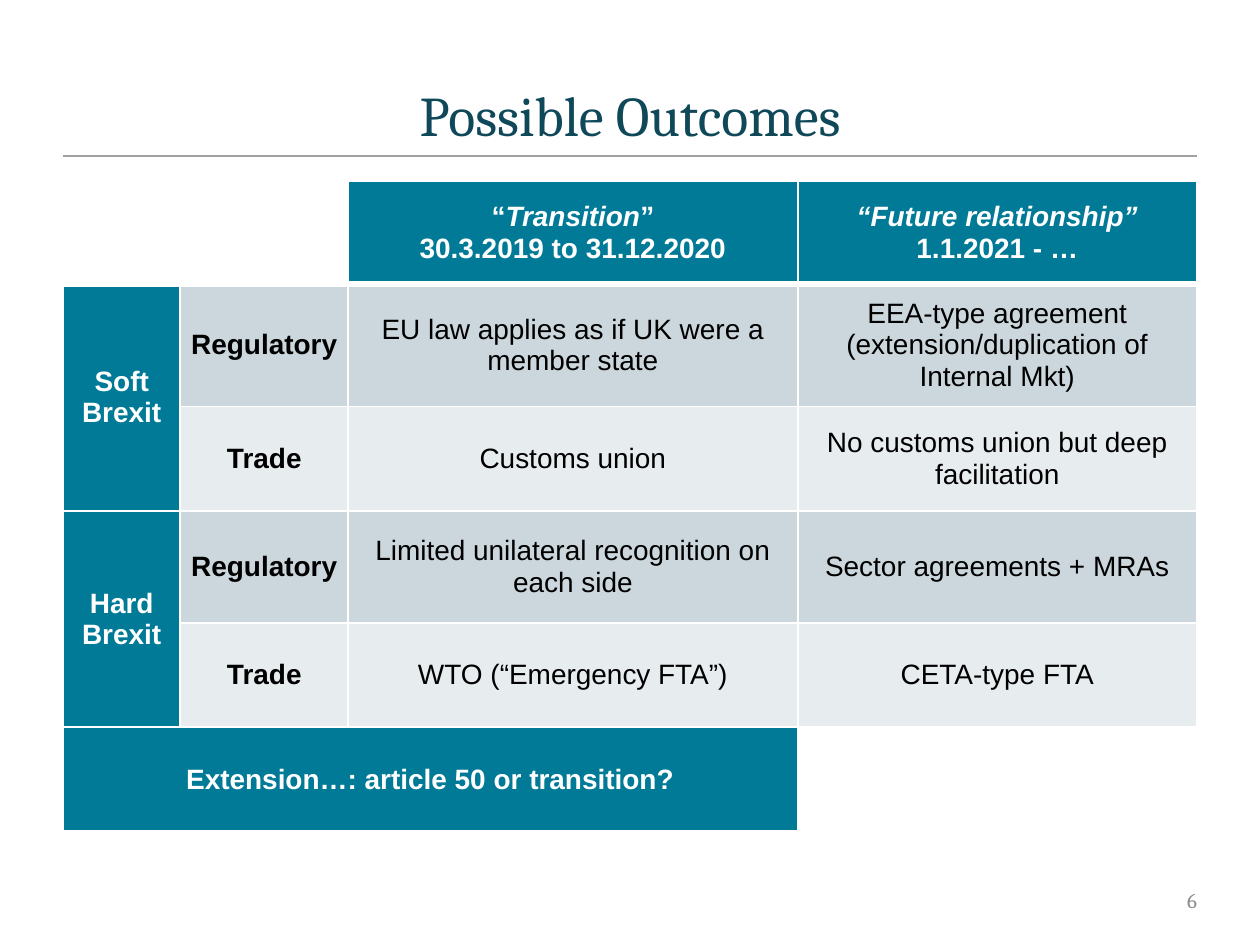
"""Build the slide on possible Brexit outcomes."""
import lxml.etree
import pptx
import pptx.dml.color
import pptx.enum.shapes
import pptx.enum.text
import pptx.oxml.ns
import pptx.util

Inches, Pt = pptx.util.Inches, pptx.util.Pt
RGBColor = pptx.dml.color.RGBColor
ALIGN = pptx.enum.text.PP_ALIGN
MIDDLE = pptx.enum.text.MSO_ANCHOR.MIDDLE
qn = pptx.oxml.ns.qn

WIDTH = Inches(7.5)
HEIGHT = WIDTH * 3 // 4
MARGIN, CONTENT = int(WIDTH * 0.05), int(WIDTH * 0.9)
RULE_TOP = Inches(0.93)

TEAL = RGBColor(0x00, 0x7A, 0x96)
NAVY = RGBColor(0x0F, 0x48, 0x59)
BAND_DARK = RGBColor(0xCC, 0xD7, 0xDD)
BAND_LIGHT = RGBColor(0xE7, 0xEC, 0xEF)
WHITE = RGBColor(0xFF, 0xFF, 0xFF)
BLACK = RGBColor(0x00, 0x00, 0x00)
RULE_GREY = RGBColor(0xA0, 0xA0, 0xA0)
NUMBER_GREY = RGBColor(0x8C, 0x8C, 0x8C)

COLUMNS = (0.7, 1, 2.68, 2.38)
ROWS = (0.61, 0.73, 0.62, 0.67, 0.62, 0.62)
PERIODS = (
    ([("“", False), ("Transition", True), ("”", False)],
     [("30.3.2019 to 31.12.2020", False)]),
    ([("“Future relationship”", True)], [("1.1.2021 - …", False)]),
)
SCENARIOS = ("Soft Brexit", "Hard Brexit")
OUTCOMES = (
    ("Regulatory", "EU law applies as if UK were a member state",
     "EEA-type agreement (extension/duplication of Internal Mkt)"),
    ("Trade", "Customs union", "No customs union but deep facilitation"),
    ("Regulatory", "Limited unilateral recognition on each side",
     "Sector agreements + MRAs"),
    ("Trade", "WTO (“Emergency FTA”)", "CETA-type FTA"),
)


def add_run(paragraph, text, font, size, color, bold=False, italic=False):
    """Append one formatted run to a paragraph."""
    run = paragraph.add_run()
    run.text = text
    run.font.name, run.font.size = font, Pt(size)
    run.font.bold, run.font.italic = bold, italic
    run.font.color.rgb = color


def set_frame(frame, align):
    """Wrap and centre a text frame vertically and align its first paragraph."""
    frame.word_wrap = True
    frame.auto_size = pptx.enum.text.MSO_AUTO_SIZE.NONE
    frame.vertical_anchor = MIDDLE
    frame.margin_left = frame.margin_right = 0
    frame.margin_top = frame.margin_bottom = 0
    frame.paragraphs[0].alignment = align
    return frame.paragraphs[0]


def add_title(slide):
    """Place and format the title placeholder."""
    title = slide.shapes.title
    title.left, title.top = MARGIN, Inches(0.43)
    title.width, title.height = CONTENT, Inches(0.5)
    add_run(set_frame(title.text_frame, ALIGN.CENTER),
            "Possible Outcomes", "Cambria", 24, NAVY)


def add_rule(slide):
    """Draw the line under the title."""
    rule = slide.shapes.add_connector(pptx.enum.shapes.MSO_CONNECTOR.STRAIGHT,
                                      MARGIN, RULE_TOP, MARGIN + CONTENT, RULE_TOP)
    rule.line.color.rgb, rule.line.width = RULE_GREY, Pt(1)
    lxml.etree.SubElement(rule._element.spPr, qn("a:effectLst"))


def add_page_number(slide):
    """Write the page number at the lower right."""
    width = CONTENT // 4
    number = slide.shapes.add_textbox(MARGIN + CONTENT - width, Inches(5.21),
                                      width, Inches(0.3))
    add_run(set_frame(number.text_frame, ALIGN.RIGHT), "6", "Cambria", 9, NUMBER_GREY)


def set_borders(cell, bottom):
    """Give a cell white borders, with its own width at the bottom."""
    properties = cell._tc.get_or_add_tcPr()
    widths = {"L": 1, "R": 1, "T": 1, "B": bottom}
    for position, (side, width) in enumerate(widths.items()):
        border = lxml.etree.Element(qn(f"a:ln{side}"), w=str(Pt(width)))
        fill = lxml.etree.SubElement(border, qn("a:solidFill"))
        lxml.etree.SubElement(fill, qn("a:srgbClr"), val=str(WHITE))
        properties.insert(position, border)


def fill_cell(cell, paragraphs, fill, color=WHITE, bold=True):
    """Colour a cell and write its paragraphs of (text, italic) runs."""
    cell.fill.solid()
    cell.fill.fore_color.rgb = fill
    cell.vertical_anchor = MIDDLE
    cell.margin_left = cell.margin_right = Inches(0.05)
    cell.margin_top = cell.margin_bottom = 0
    for index, runs in enumerate(paragraphs):
        frame = cell.text_frame
        paragraph = frame.add_paragraph() if index else frame.paragraphs[0]
        paragraph.alignment = ALIGN.CENTER
        for text, italic in runs:
            add_run(paragraph, text, "Arial", 12, color, bold, italic)


def add_outcomes(slide):
    """Build the table of scenarios, areas and periods."""
    table = slide.shapes.add_table(len(ROWS), len(COLUMNS), MARGIN, Inches(1.08),
                                   CONTENT, Inches(sum(ROWS))).table
    for column, share in zip(table.columns, COLUMNS):
        column.width = int(CONTENT * share / sum(COLUMNS))
    for row, height in zip(table.rows, ROWS):
        row.height = Inches(height)
    for row in range(len(ROWS)):
        for column in range(len(COLUMNS)):
            cell = table.cell(row, column)
            cell.fill.background()
            set_borders(cell, 1 if row else 3)

    table.cell(0, 0).merge(table.cell(0, 1))
    for column, period in enumerate(PERIODS, 2):
        fill_cell(table.cell(0, column), period, TEAL)
    for index, scenario in enumerate(SCENARIOS):
        top = 1 + 2 * index
        table.cell(top, 0).merge(table.cell(top + 1, 0))
        fill_cell(table.cell(top, 0), [[(scenario, False)]], TEAL)
    for row, outcome in enumerate(OUTCOMES, 1):
        band = BAND_DARK if row % 2 else BAND_LIGHT
        for column, text in enumerate(outcome, 1):
            fill_cell(table.cell(row, column), [[(text, False)]], band, BLACK, column == 1)
    table.cell(5, 0).merge(table.cell(5, 2))
    fill_cell(table.cell(5, 0), [[("Extension…: article 50 or transition?", False)]], TEAL)


def main():
    """Create and save the slide."""
    presentation = pptx.Presentation()
    presentation.slide_width, presentation.slide_height = WIDTH, HEIGHT
    slide = presentation.slides.add_slide(presentation.slide_layouts[5])
    add_title(slide)
    add_rule(slide)
    add_outcomes(slide)
    add_page_number(slide)
    presentation.save("out.pptx")


if __name__ == "__main__":
    main()
